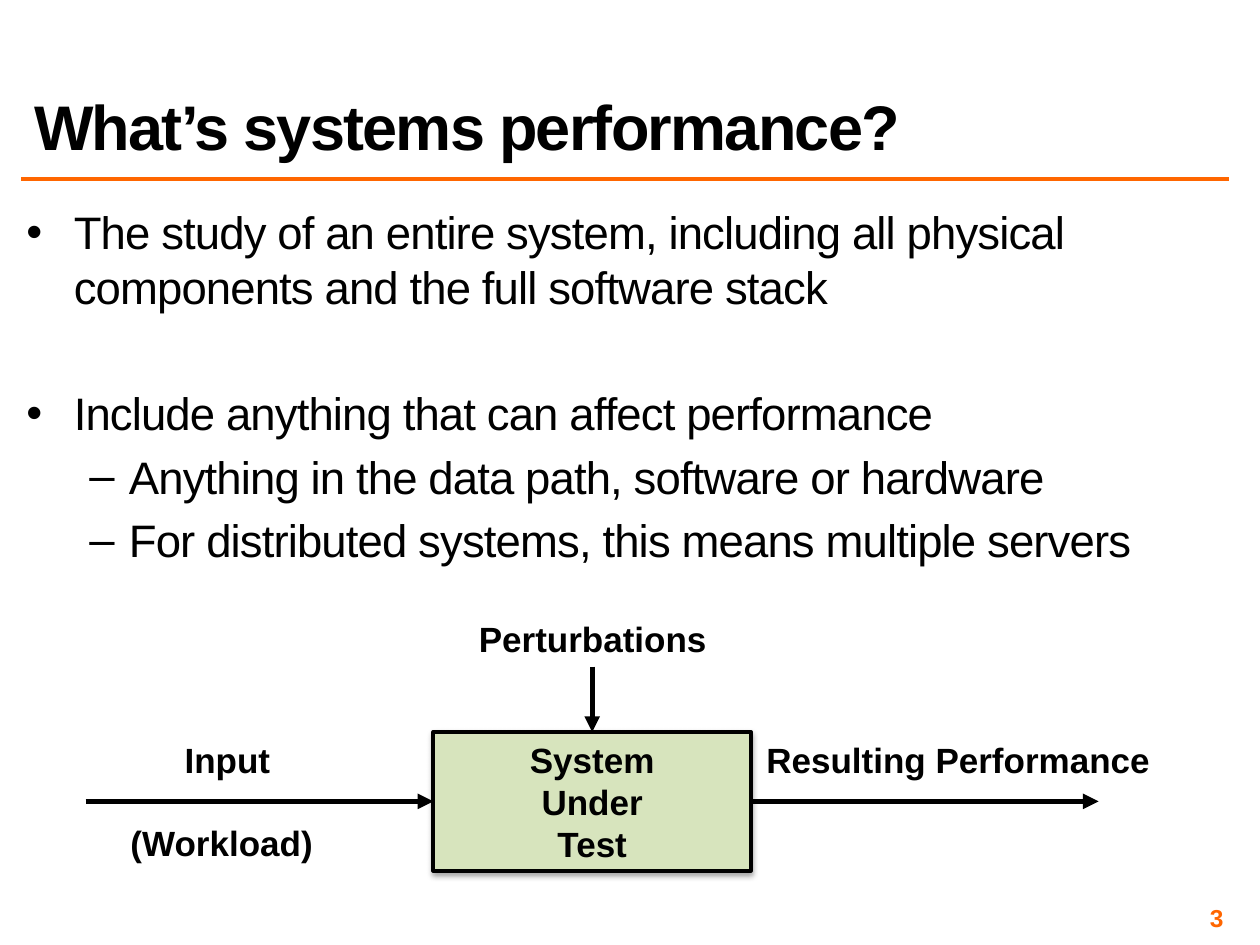
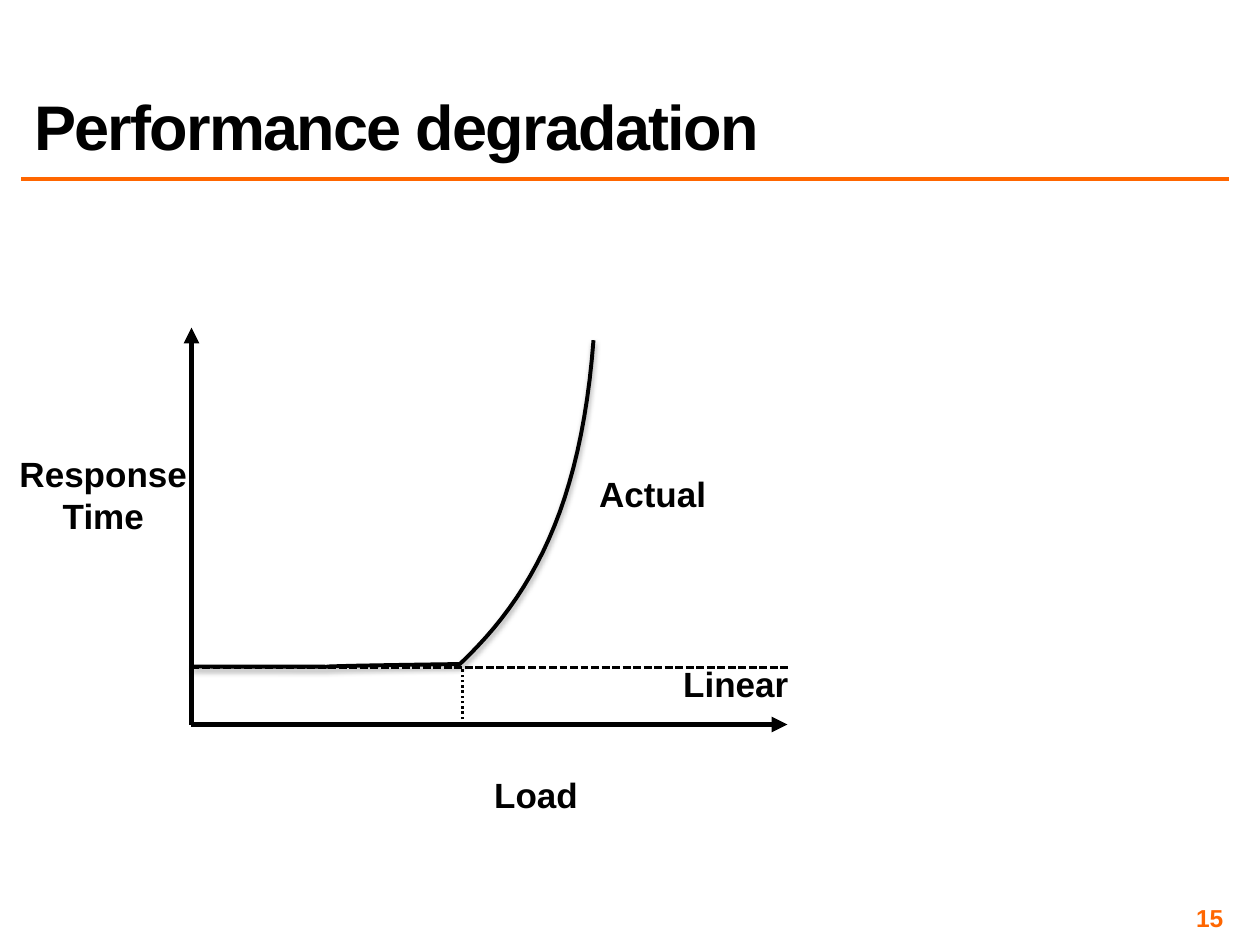
from lxml.etree import SubElement
from pptx import Presentation
from pptx.dml.color import RGBColor
from pptx.enum.dml import MSO_LINE
from pptx.enum.shapes import MSO_CONNECTOR, MSO_SHAPE
from pptx.enum.text import MSO_ANCHOR, MSO_AUTO_SIZE, PP_ALIGN
from pptx.oxml import parse_xml
from pptx.oxml.ns import nsdecls, qn
from pptx.util import Inches, Pt

THEME = {
    "ink": RGBColor(0x00, 0x00, 0x00),
    "accent": RGBColor(0xFF, 0x66, 0x00),
    "box": RGBColor(0xD7, 0xE4, 0xBD),
    "title": {"name": "Arial", "size": Pt(36), "bold": True},
    "body": {"name": "Arial", "size": Pt(26), "bold": False},
    "label": {"name": "Arial", "size": Pt(20), "bold": True},
    "number": {"name": "Arial", "size": Pt(14), "bold": True},
}
SHADOW = (f'<a:effectLst {nsdecls("a")}><a:outerShdw blurRad="40000" dist="23000" '
          'dir="5400000" rotWithShape="0"><a:srgbClr val="000000"><a:alpha val="35000"/>'
          '</a:srgbClr></a:outerShdw></a:effectLst>')


def write(p, text, kind, color="ink", align=PP_ALIGN.LEFT, spc=0):
    """Fill a paragraph and style its runs; spc is letter spacing in 1/100 pt."""
    p.text = text
    p.alignment = align
    for r in p.runs:
        for name, value in THEME[kind].items():
            setattr(r.font, name, value)
        r.font.color.rgb = THEME[color]
        if spc:
            r.font._element.set("spc", str(spc))


def draw_line(s, x1, y1, x2, y2, width=3, color="ink", dash=None, arrow=False):
    line = s.shapes.add_connector(MSO_CONNECTOR.STRAIGHT, *map(Inches, (x1, y1, x2, y2)))
    line.line.color.rgb = THEME[color]
    line.line.width = Pt(width)
    if dash:
        line.line.dash_style = dash
    if arrow:
        SubElement(line.line._get_or_add_ln(), qn("a:tailEnd"), type="triangle")
    SubElement(line._element.spPr, qn("a:effectLst"))
    return line


prs = Presentation()
prs.slide_width, prs.slide_height = Inches(10), Inches(7.5)

# Title, rule, page number and labels of every slide
TITLE_AND_CONTENT, TITLE_ONLY = 1, 5
PAGES = [
    (TITLE_AND_CONTENT, "What’s systems performance?", "3", [
        ("Input", 1.36, 5.81, 0.89, 0.44),
        ("(Workload)", 0.93, 6.47, 1.66, 0.44),
        ("Resulting Performance", 5.97, 5.81, 3.27, 0.44),
        ("Perturbations", 3.69, 4.85, 2.03, 0.44)]),
    (TITLE_ONLY, "Performance degradation", "15", [
        ("Load", 3.82, 6.09, 0.87, 0.44),
        ("Response\nTime", 0.05, 3.54, 1.54, 0.77),
        ("Linear", 5.32, 5.21, 1.04, 0.44),
        ("Actual", 4.65, 3.7, 1.06, 0.44)]),
]
for layout, title, number, labels in PAGES:
    s = prs.slides.add_slide(prs.slide_layouts[layout])
    draw_line(s, 0.17, 1.42, 9.75, 1.42, width=2, color="accent")

    sp = s.shapes.title
    sp.left, sp.top, sp.width, sp.height = map(Inches, (0.17, 0.17, 9.58, 1.17))
    tf = sp.text_frame
    tf.auto_size = MSO_AUTO_SIZE.NONE
    tf.vertical_anchor = MSO_ANCHOR.BOTTOM
    write(tf.paragraphs[0], title, "title", spc=-100)
    tf.paragraphs[0].line_spacing = 0.8

    tf = s.shapes.add_textbox(*map(Inches, (7.42, 7.17, 2.33, 0.23))).text_frame
    tf.word_wrap = True
    tf.vertical_anchor = MSO_ANCHOR.MIDDLE
    for side in ("left", "top", "right", "bottom"):
        setattr(tf, f"margin_{side}", Inches(0.04))
    write(tf.paragraphs[0], number, "number", "accent", PP_ALIGN.RIGHT)

    for text, *place in labels:
        tf = s.shapes.add_textbox(*map(Inches, place)).text_frame
        tf.word_wrap = False
        tf.auto_size = MSO_AUTO_SIZE.SHAPE_TO_FIT_TEXT
        write(tf.paragraphs[0], text, "label", align=PP_ALIGN.CENTER)

overview, degradation = prs.slides

# Overview: bullets
BULLETS = [
    (0, "The study of an entire system, including all physical components "
        "and the full software stack", None),
    (0, "Include anything that can affect performance", Pt(41)),
    (1, "Anything in the data path, software or hardware", None),
    (1, "For distributed systems, this means multiple servers", None),
]
sp = overview.placeholders[1]
sp.left, sp.top, sp.width, sp.height = map(Inches, (0.17, 1.58, 9.58, 5.5))
tf = sp.text_frame
tf.auto_size = MSO_AUTO_SIZE.NONE
for side in ("left", "top", "right", "bottom"):
    setattr(tf, f"margin_{side}", Inches(0.04))
for i, (level, text, gap) in enumerate(BULLETS):
    p = tf.add_paragraph() if i else tf.paragraphs[0]
    p.level = level
    write(p, text, "body", spc=-50)
    if gap:
        p.space_before = gap

# Overview: system under test with its flows
box = overview.shapes.add_shape(MSO_SHAPE.RECTANGLE, *map(Inches, (3.44, 5.81, 2.52, 1.1)))
box.fill.solid()
box.fill.fore_color.rgb = THEME["box"]
tf = box.text_frame
tf.vertical_anchor = MSO_ANCHOR.MIDDLE
write(tf.paragraphs[0], "System\nUnder\nTest", "label", align=PP_ALIGN.CENTER)

draw_line(overview, 0.68, 6.36, 3.44, 6.36, arrow=True).end_connect(box, 1)
draw_line(overview, 5.96, 6.36, 8.72, 6.36, arrow=True).begin_connect(box, 3)
draw_line(overview, 4.7, 5.29, 4.7, 5.81, arrow=True).end_connect(box, 0)

# Degradation: axes and guides
ORIGIN = (1.52, 5.75)
draw_line(degradation, *ORIGIN, 6.25, 5.75, arrow=True)
draw_line(degradation, *ORIGIN, 1.52, 2.6, arrow=True)
draw_line(degradation, 1.52, 5.3, 6.25, 5.3, width=1.5, dash=MSO_LINE.SQUARE_DOT)
draw_line(degradation, 3.67, 5.75, 3.67, 5.3, width=1.5, dash=MSO_LINE.ROUND_DOT)

# Degradation: flat response up to the knee, then a steep rise, as Bézier segments
SEGMENTS = [
    ((1.52, 5.29), (3.66, 5.29), (1.54, 5.3), (3.65, 5.27)),
    ((3.65, 5.27), (4.22, 4.73), (4.61, 4.02), (4.71, 2.7)),
]
STEPS = 24
points = []
for segment in SEGMENTS:
    for step in range(1, STEPS + 1):
        t = step / STEPS
        weights = ((1 - t) ** 3, 3 * t * (1 - t) ** 2, 3 * t ** 2 * (1 - t), t ** 3)
        points.append([Inches(sum(w * c for w, c in zip(weights, axis)))
                       for axis in zip(*segment)])
builder = degradation.shapes.build_freeform(*map(Inches, SEGMENTS[0][0]))
builder.add_line_segments(points, close=False)
curve = builder.convert_to_shape()
curve.fill.background()

for sp in (box, curve):
    sp.line.color.rgb = THEME["ink"]
    sp.line.width = Pt(2.25)
    sp._element.spPr.append(parse_xml(SHADOW))

prs.save("out.pptx")
